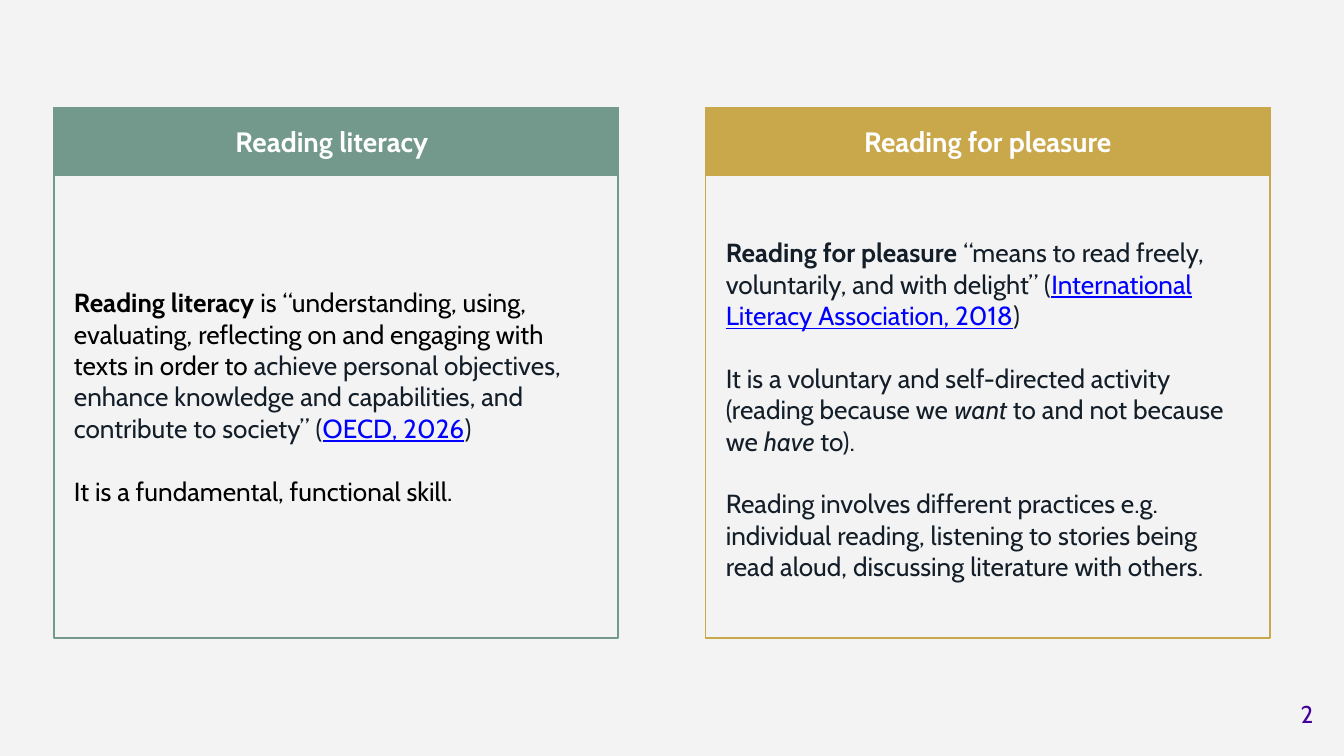
from pptx import Presentation
from pptx.dml.color import RGBColor
from pptx.enum.shapes import MSO_SHAPE
from pptx.enum.text import MSO_ANCHOR, PP_ALIGN
from pptx.util import Inches, Pt

RECT = MSO_SHAPE.RECTANGLE
TOP, MIDDLE = MSO_ANCHOR.TOP, MSO_ANCHOR.MIDDLE
LEFT, CENTER, RIGHT = PP_ALIGN.LEFT, PP_ALIGN.CENTER, PP_ALIGN.RIGHT

CELL = 0.05
FONT = "Cabin"
BLACK, INK, LINK, WHITE = "000000", "131E29", "0000FF", "FFFFFF"
GREEN, GOLD, PURPLE, PAPER = "72998C", "C9A84C", "440099", "F3F3F3"
CARD_TOP, CARD_COLS, CARD_ROWS, HEADER_ROWS = 16, 84, 79, 10
TITLE_COLS, BODY_COLS, BODY_INSET = 78, 77, 3


def rgb(color):
    return RGBColor.from_string(color)


def grid(*cells):
    return [Inches(n * CELL) for n in cells]


def add_rect(s, box, color, filled=False):
    sp = s.shapes.add_shape(RECT, *grid(*box))
    sp.shadow.inherit = False
    sp.line.color.rgb = rgb(color)
    sp.line.width = Pt(1)
    if filled:
        sp.fill.solid()
        sp.fill.fore_color.rgb = rgb(color)
    else:
        sp.fill.background()


def add_text(s, box, paragraphs, size, align=LEFT, anchor=MIDDLE, inset=0, gap=0):
    tf = s.shapes.add_textbox(*grid(*box)).text_frame
    tf.word_wrap = True
    tf.vertical_anchor = anchor
    tf.margin_left = tf.margin_right = tf.margin_top = tf.margin_bottom = Inches(inset)
    for i, runs in enumerate(paragraphs):
        p = tf.paragraphs[0] if i == 0 else tf.add_paragraph()
        p.alignment = align
        p.font.name = FONT
        p.font.size = Pt(size)
        if i:
            p.space_before = Pt(gap)
        for text, color, style in runs:
            r = p.add_run()
            r.text = text
            r.font.color.rgb = rgb(color)
            if style:
                setattr(r.font, style, True)


def add_card(s, col, color, title, title_inset, body_row, body_rows, body):
    add_rect(s, (col, CARD_TOP, CARD_COLS, CARD_ROWS), color)
    add_rect(s, (col, CARD_TOP, CARD_COLS, HEADER_ROWS), color, filled=True)
    add_text(s, (col + title_inset, CARD_TOP, TITLE_COLS, HEADER_ROWS),
             [[(title, WHITE, "bold")]], 15, CENTER)
    add_text(s, (col + BODY_INSET, body_row, BODY_COLS, body_rows), body, 14, gap=16.8)


def main():
    prs = Presentation()
    prs.slide_width = Inches(10)
    prs.slide_height = prs.slide_width * 9 // 16
    s = prs.slides.add_slide(prs.slide_layouts[6])
    s.background.fill.solid()
    s.background.fill.fore_color.rgb = rgb(PAPER)

    literacy = [
        [("Reading literacy ", BLACK, "bold"),
         ("is “understanding, using, evaluating, reflecting on and engaging with "
          "texts in order to ", BLACK, None),
         ("achieve personal objectives, enhance knowledge and capabilities, and "
          "contribute to society” (", INK, None),
         ("OECD, 2026", LINK, "underline"),
         (")", INK, None)],
        [("It is a fundamental, functional skill.", BLACK, None)],
    ]
    pleasure = [
        [("Reading for pleasure ", INK, "bold"),
         ("“means to read freely, voluntarily, and with delight” (", INK, None),
         ("International Literacy Association, 2018", LINK, "underline"),
         (")", INK, None)],
        [("It is a voluntary and self-directed activity (reading because we ", INK, None),
         ("want ", INK, "italic"),
         ("to and not because we ", INK, None),
         ("have ", INK, "italic"),
         ("to).", INK, None)],
        [("Reading involves different practices e.g. individual reading, listening to "
          "stories being read aloud, discussing literature with others.", INK, None)],
    ]

    add_text(s, (185.4, 102, 12, 8.6), [[("2", PURPLE, None)]], 13, RIGHT, TOP, inset=0.1)
    add_card(s, 8, GREEN, "Reading literacy", 2.4, 31, 56, literacy)
    add_card(s, 105, GOLD, "Reading for pleasure", 3, 29.8, 62.2, pleasure)
    prs.save("out.pptx")


if __name__ == "__main__":
    main()
